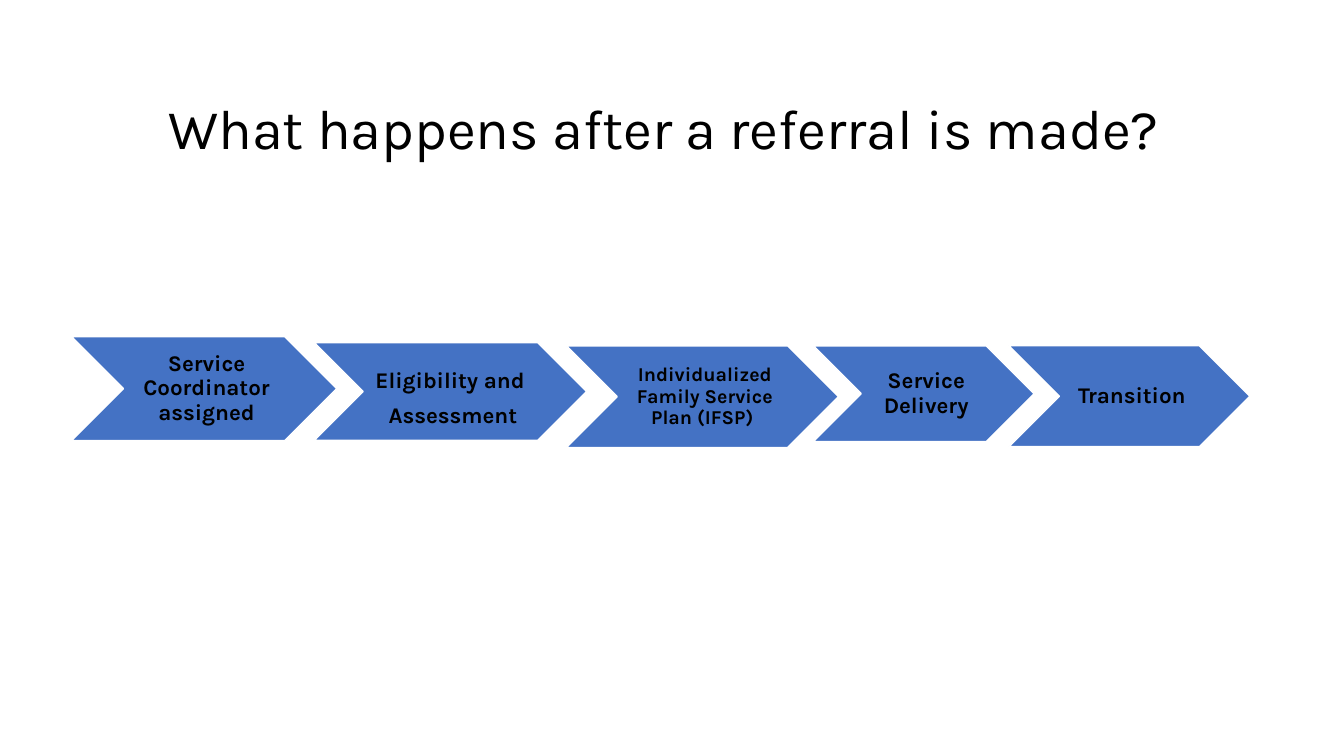
from dataclasses import dataclass

from pptx import Presentation
from pptx.dml.color import RGBColor
from pptx.enum.shapes import MSO_SHAPE as SHAPE
from pptx.enum.text import MSO_ANCHOR as ANCHOR, PP_ALIGN as ALIGN
from pptx.util import Pt


@dataclass(frozen=True)
class Theme:
    font: str = "Karla"
    text: RGBColor = RGBColor(0, 0, 0)
    step: RGBColor = RGBColor(0x44, 0x72, 0xC4)
    edge: RGBColor = RGBColor(0xFF, 0xFF, 0xFF)
    title_size: int = 40
    step_size: int = 16
    small_size: int = 14


THEME = Theme()

# Each step: left, top, width, height, size, line spacing, top inset, paragraphs
STEPS = [
    (51.1, 240.5, 189.4, 74.2, THEME.step_size, 0.9, 1.5,
     ["Service Coordinator assigned"]),
    (224.6, 244.8, 194.4, 69.8, THEME.step_size, 1, 9,
     ["Eligibility and ", "Assessment"]),
    (404.6, 247, 194.4, 72.7, THEME.small_size, 0.9, 1.5,
     ["Individualized Family Service Plan (IFSP) "]),
    (581, 247, 157.7, 68.4, THEME.step_size, 0.9, 1.5,
     ["Service Delivery"]),
    (720.7, 247, 172.1, 72, THEME.step_size, 0.9, 1.5,
     ["Transition"]),
]


def style(p, size, bold=False):
    p.font.name = THEME.font
    p.font.size = Pt(size)
    p.font.bold = bold
    p.font.color.rgb = THEME.text


def add_title(s, x, y, w, h, text):
    title = s.shapes.title
    title.left, title.top, title.width, title.height = Pt(x), Pt(y), Pt(w), Pt(h)
    tf = title.text_frame
    tf.text = text
    tf.word_wrap = True
    tf.vertical_anchor = ANCHOR.TOP
    p = tf.paragraphs[0]
    p.alignment = ALIGN.LEFT
    style(p, THEME.title_size)


def add_step(s, x, y, w, h, size, spacing, inset_top, lines):
    sp = s.shapes.add_shape(SHAPE.CHEVRON, Pt(x), Pt(y), Pt(w), Pt(h))
    sp.shadow.inherit = False
    sp.fill.solid()
    sp.fill.fore_color.rgb = THEME.step
    sp.line.color.rgb = THEME.edge
    sp.line.width = Pt(1)

    tf = sp.text_frame
    tf.word_wrap = True
    tf.vertical_anchor = ANCHOR.MIDDLE
    tf.margin_left, tf.margin_right = Pt(5), Pt(1.5)
    tf.margin_top, tf.margin_bottom = Pt(inset_top), Pt(1.5)
    tf.text = "\n".join(lines)
    for p in tf.paragraphs:
        p.alignment = ALIGN.CENTER
        p.line_spacing = spacing
        p.space_after = Pt(0.35 * size)
        style(p, size, bold=True)


def add_process(s, steps):
    for step in steps:
        add_step(s, *step)


def main():
    prs = Presentation()
    prs.slide_width, prs.slide_height = Pt(960), Pt(540)
    s = prs.slides.add_slide(prs.slide_layouts[5])

    # Title
    add_title(s, 113, 63.4, 840, 55.4, "What happens after a referral is made?")

    # Process chevrons
    add_process(s, STEPS)

    prs.save("out.pptx")


if __name__ == "__main__":
    main()
